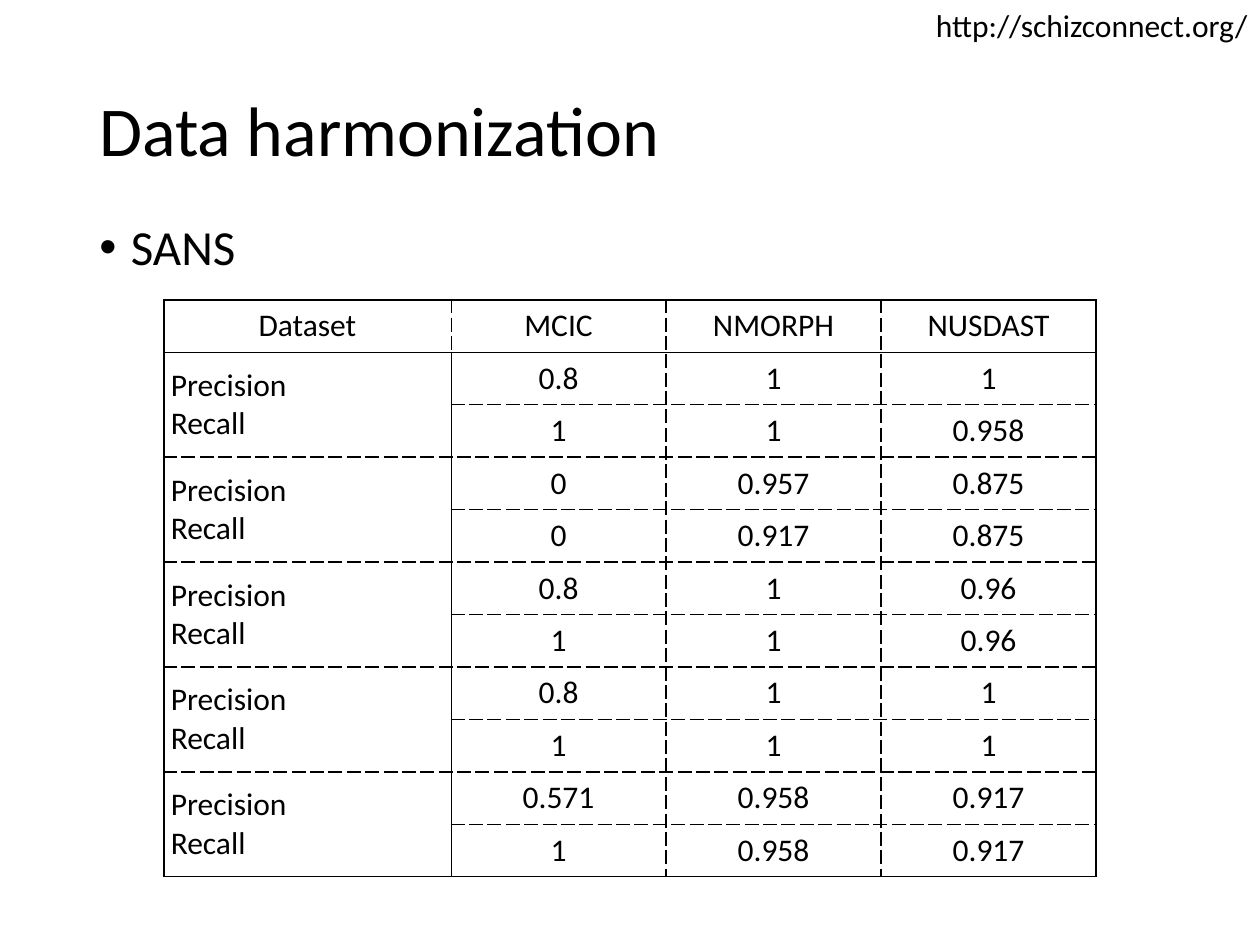
"""Build the data harmonization slide with its precision and recall table."""
from lxml.etree import SubElement
from pptx import Presentation
from pptx.dml.color import RGBColor
from pptx.enum.text import MSO_ANCHOR as Anchor, PP_ALIGN as Align
from pptx.oxml.ns import qn
from pptx.util import Inches, Pt

BLACK = RGBColor(0, 0, 0)
FONT = "Calibri"

ADDRESS = "http://schizconnect.org/"
TITLE = "Data harmonization"
BULLET = "SANS"
HEADERS = ["Dataset", "MCIC", "NMORPH", "NUSDAST"]
MEASURES = ["Precision", "Recall"]
SCORES = [
    ("0.8", "1", "1"),
    ("1", "1", "0.958"),
    ("0", "0.957", "0.875"),
    ("0", "0.917", "0.875"),
    ("0.8", "1", "0.96"),
    ("1", "1", "0.96"),
    ("0.8", "1", "1"),
    ("1", "1", "1"),
    ("0.571", "0.958", "0.917"),
    ("1", "0.958", "0.917"),
]

WIDTH, HEIGHT = Inches(10), Inches(7.5)
MARGIN = Inches(0.69)
TABLE_LEFT, TABLE_TOP = Inches(1.3), Inches(2.38)
TABLE_WIDTH, TABLE_HEIGHT = Inches(7.4), Inches(4.58)
FIRST_COLUMN = Inches(2.28)
CELL_INSET = Pt(4)
ROWS, COLUMNS = len(SCORES) + 1, len(HEADERS)
GROUP = len(MEASURES)

SOLID, THIN_SOLID = (1, "solid"), (0.5, "solid")
DASHED, THIN_DASHED = (1, "dash"), (0.5, "dash")


def write(paragraph, text, size, align=Align.LEFT):
    paragraph.alignment = align
    run = paragraph.add_run()
    run.text = text
    run.font.name, run.font.size, run.font.bold = FONT, Pt(size), False
    run.font.color.rgb = BLACK


def add_text(slide, box, text, size, align=Align.LEFT, anchor=Anchor.TOP,
             wrap=True, spacing=0.9, bullet=False):
    frame = slide.shapes.add_textbox(*box).text_frame
    frame.word_wrap = wrap
    frame.vertical_anchor = anchor
    paragraph = frame.paragraphs[0]
    if bullet:
        properties = paragraph._p.get_or_add_pPr()
        properties.set("marL", str(Inches(0.25)))
        properties.set("indent", str(-Inches(0.25)))
        SubElement(properties, qn("a:buFont"), typeface="Arial")
        SubElement(properties, qn("a:buChar"), char="•")
    paragraph.line_spacing = spacing
    write(paragraph, text, size, align)


def horizontal_border(edge):
    if edge in (0, 1, ROWS):
        return SOLID
    return DASHED if (edge - 1) % GROUP == 0 else THIN_DASHED


def vertical_border(edge, row):
    if edge in (0, COLUMNS):
        return SOLID
    if edge == 1:
        return THIN_DASHED if row == 0 else THIN_SOLID
    return DASHED


def draw_borders(cell, row, column):
    bottom = row + (GROUP if column == 0 and row else 1)
    borders = {
        "a:lnL": vertical_border(column, row),
        "a:lnR": vertical_border(column + 1, row),
        "a:lnT": horizontal_border(row),
        "a:lnB": horizontal_border(bottom),
    }
    properties = cell._tc.get_or_add_tcPr()
    for side, (width, dash) in borders.items():
        line = SubElement(properties, qn(side), w=str(Pt(width)))
        fill = SubElement(line, qn("a:solidFill"))
        SubElement(fill, qn("a:srgbClr"), val=str(BLACK))
        SubElement(line, qn("a:prstDash"), val=dash)


def fill_cell(table, row, column, lines, align=Align.CENTER):
    cell = table.cell(row, column)
    cell.margin_left = cell.margin_right = CELL_INSET
    cell.margin_top = cell.margin_bottom = CELL_INSET
    cell.vertical_anchor = Anchor.MIDDLE
    draw_borders(cell, row, column)
    cell.fill.background()
    frame = cell.text_frame
    for index, text in enumerate(lines):
        paragraph = frame.add_paragraph() if index else frame.paragraphs[0]
        write(paragraph, text, 18, align)


def add_scores(slide):
    table = slide.shapes.add_table(ROWS, COLUMNS, TABLE_LEFT, TABLE_TOP,
                                   TABLE_WIDTH, TABLE_HEIGHT).table
    table.first_row = table.horz_banding = False
    for index, column in enumerate(table.columns):
        shared = (TABLE_WIDTH - FIRST_COLUMN) // (COLUMNS - 1)
        column.width = shared if index else FIRST_COLUMN
    for column, header in enumerate(HEADERS):
        fill_cell(table, 0, column, [header])
    for row, scores in enumerate(SCORES, 1):
        if (row - 1) % GROUP == 0:
            table.cell(row, 0).merge(table.cell(row + GROUP - 1, 0))
            fill_cell(table, row, 0, MEASURES, Align.LEFT)
        for column, score in enumerate(scores, 1):
            fill_cell(table, row, column, [score])


def main():
    presentation = Presentation()
    presentation.slide_width, presentation.slide_height = WIDTH, HEIGHT
    slide = presentation.slides.add_slide(presentation.slide_layouts[6])
    content_width = WIDTH - 2 * MARGIN
    address_width = Inches(2.71)
    add_text(slide, (WIDTH - address_width, 0, address_width, Inches(0.4)),
             ADDRESS, 18, Align.RIGHT, wrap=False, spacing=1.0)
    add_text(slide, (MARGIN, Inches(0.55), content_width, Inches(1.02)),
             TITLE, 40, anchor=Anchor.MIDDLE)
    add_text(slide, (MARGIN, Inches(1.72), content_width, Inches(5.04)),
             BULLET, 28, bullet=True)
    add_scores(slide)
    presentation.save("out.pptx")


if __name__ == "__main__":
    main()
